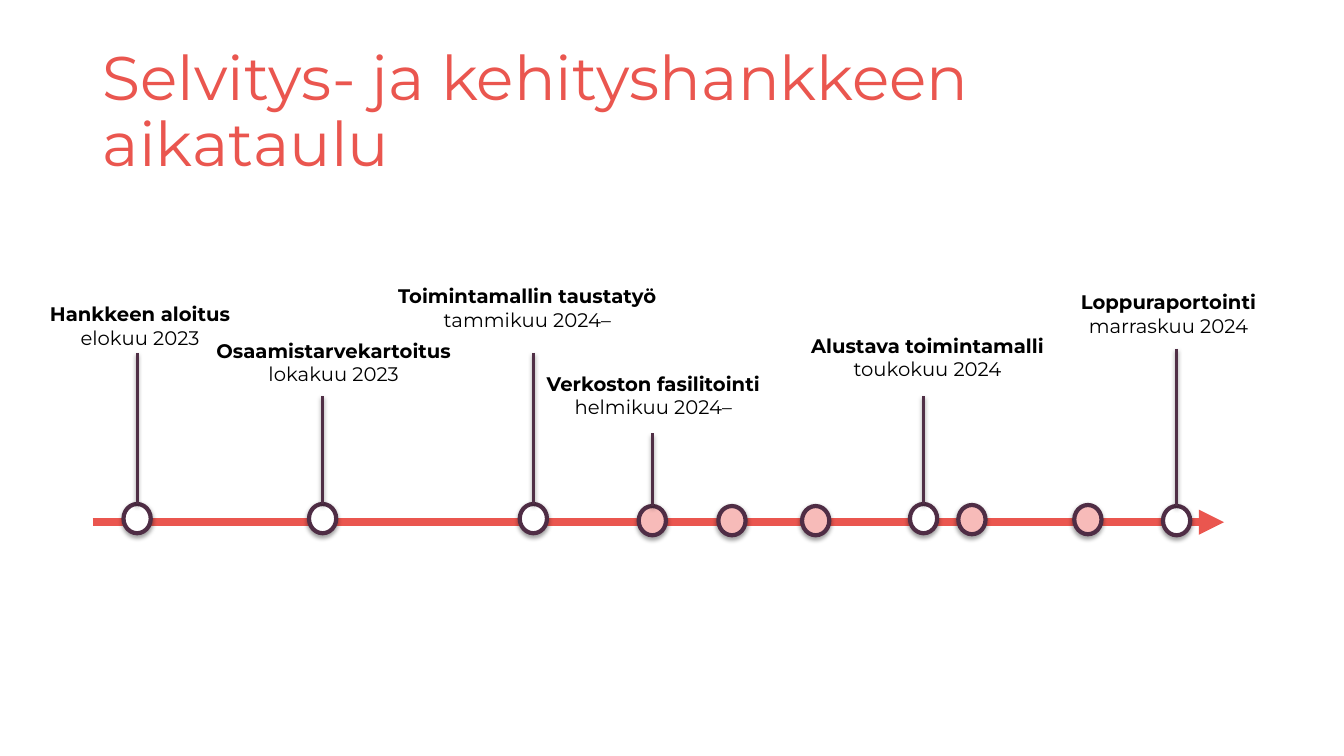
from dataclasses import dataclass
from typing import NamedTuple

from lxml.etree import SubElement
from pptx import Presentation
from pptx.dml.color import RGBColor
from pptx.enum.shapes import MSO_CONNECTOR, MSO_SHAPE
from pptx.enum.text import MSO_ANCHOR, MSO_AUTO_SIZE, PP_ALIGN
from pptx.oxml.ns import qn
from pptx.util import Inches, Pt


@dataclass(frozen=True)
class Theme:
    font: str = "Montserrat"
    accent: RGBColor = RGBColor(0xEA, 0x56, 0x4F)
    stem: RGBColor = RGBColor(0x50, 0x2F, 0x46)
    ring: RGBColor = RGBColor(0x4F, 0x2D, 0x45)
    white: RGBColor = RGBColor(0xFF, 0xFF, 0xFF)
    pink: RGBColor = RGBColor(0xF7, 0xBB, 0xB9)
    text: RGBColor = RGBColor(0, 0, 0)
    title_size: Pt = Pt(44)
    label_size: Pt = Pt(14)


class Box(NamedTuple):
    left: float
    top: float
    width: float
    height: float


class Milestone(NamedTuple):
    """Horizontal and vertical values are offsets in inches from the timeline box."""
    x: float
    dot_top: float
    stem_top: float
    label_x: float
    label_top: float
    label_width: float
    heading: str
    date: str
    fill: RGBColor


THEME = Theme()
DOT_WIDTH, DOT_HEIGHT = 0.27, 0.29
LABEL_HEIGHT = 0.57
AXIS_Y = 2.41

MILESTONES = [
    Milestone(0.44, 2.23, 0.73, 0.47, 0.18, 2.36,
              "Hankkeen aloitus", "elokuu 2023", THEME.white),
    Milestone(2.28, 2.23, 1.16, 2.39, 0.54, 2.55,
              "Osaamistarvekartoitus", "lokakuu 2023", THEME.white),
    Milestone(4.37, 2.23, 0.73, 4.31, 0, 2.87,
              "Toimintamallin taustatyö", "tammikuu 2024–", THEME.white),
    Milestone(5.55, 2.25, 1.53, 5.56, 0.87, 2.36,
              "Verkoston fasilitointi", "helmikuu 2024–", THEME.pink),
    Milestone(8.24, 2.23, 1.16, 8.28, 0.49, 2.54,
              "Alustava toimintamalli", "toukokuu 2024", THEME.white),
    Milestone(10.75, 2.25, 0.69, 10.67, 0.06, 1.96,
              "Loppuraportointi", "marraskuu 2024", THEME.white),
]
EXTRA_DOTS = [(6.34, 2.25), (7.17, 2.25), (8.72, 2.24), (9.87, 2.24)]


def set_effects(sp, shadow):
    """Override the theme effects with a soft downward shadow or with none."""
    effects = SubElement(sp._element.spPr, qn("a:effectLst"))
    if shadow:
        outer = SubElement(effects, qn("a:outerShdw"), blurRad=str(Pt(3.1)),
                           dist=str(Pt(1.7)), dir="5400000", rotWithShape="0")
        color = SubElement(outer, qn("a:srgbClr"), val="000000")
        SubElement(color, qn("a:alpha"), val="36000")


def add_line(s, start, end, color, width, shadow):
    line = s.shapes.add_connector(MSO_CONNECTOR.STRAIGHT,
                                  *map(Inches, (*start, *end)))
    line.line.color.rgb = color
    line.line.width = Pt(width)
    set_effects(line, shadow)
    return line


def add_dot(s, x, top, fill):
    dot = s.shapes.add_shape(MSO_SHAPE.OVAL, Inches(x - DOT_WIDTH / 2), Inches(top),
                             Inches(DOT_WIDTH), Inches(DOT_HEIGHT))
    dot.fill.solid()
    dot.fill.fore_color.rgb = fill
    dot.line.color.rgb = THEME.ring
    dot.line.width = Pt(3)
    set_effects(dot, shadow=True)
    return dot


def add_label(s, box, heading, date):
    tf = s.shapes.add_textbox(*map(Inches, box)).text_frame
    tf.word_wrap = False
    tf.text = f"{heading}\n{date}"
    for p, bold in zip(tf.paragraphs, (True, False)):
        p.alignment = PP_ALIGN.CENTER
        font = p.runs[0].font
        font.name, font.size, font.bold = THEME.font, THEME.label_size, bold
        font.color.rgb = THEME.text


def add_title(s, box, text):
    title = s.shapes.title
    title.left, title.top, title.width, title.height = map(Inches, box)
    tf = title.text_frame
    tf.text = text
    tf.word_wrap = True
    tf.auto_size = MSO_AUTO_SIZE.NONE
    tf.vertical_anchor = MSO_ANCHOR.MIDDLE
    p = tf.paragraphs[0]
    p.alignment = PP_ALIGN.LEFT
    p.line_spacing = 0.9
    font = p.runs[0].font
    font.name, font.size = THEME.font, THEME.title_size
    font.color.rgb = THEME.accent


def add_milestone(s, box, m):
    x = box.left + m.x
    dot = add_dot(s, x, box.top + m.dot_top, m.fill)
    stem = add_line(s, (x, box.top + m.stem_top), (x, box.top + m.dot_top),
                    THEME.stem, 2, shadow=True)
    stem.end_connect(dot, 0)
    label_box = Box(box.left + m.label_x - m.label_width / 2,
                    box.top + m.label_top, m.label_width, LABEL_HEIGHT)
    add_label(s, label_box, m.heading, m.date)


def add_timeline(s, box):
    y = box.top + AXIS_Y
    axis = add_line(s, (box.left, y), (box.left + box.width, y),
                    THEME.accent, 6, shadow=False)
    SubElement(axis.line._get_or_add_ln(), qn("a:tailEnd"), type="triangle")
    for m in MILESTONES:
        add_milestone(s, box, m)
    for x, top in EXTRA_DOTS:
        add_dot(s, box.left + x, box.top + top, THEME.pink)


def main():
    prs = Presentation()
    prs.slide_width, prs.slide_height = Inches(13.33), Inches(7.5)
    s = prs.slides.add_slide(prs.slide_layouts[5])
    add_title(s, Box(0.92, 0.4, 11.5, 1.45), "Selvitys- ja kehityshankkeen aikataulu")
    add_timeline(s, Box(0.92, 2.77, 11.22, 2.54))
    prs.save("out.pptx")


if __name__ == "__main__":
    main()
